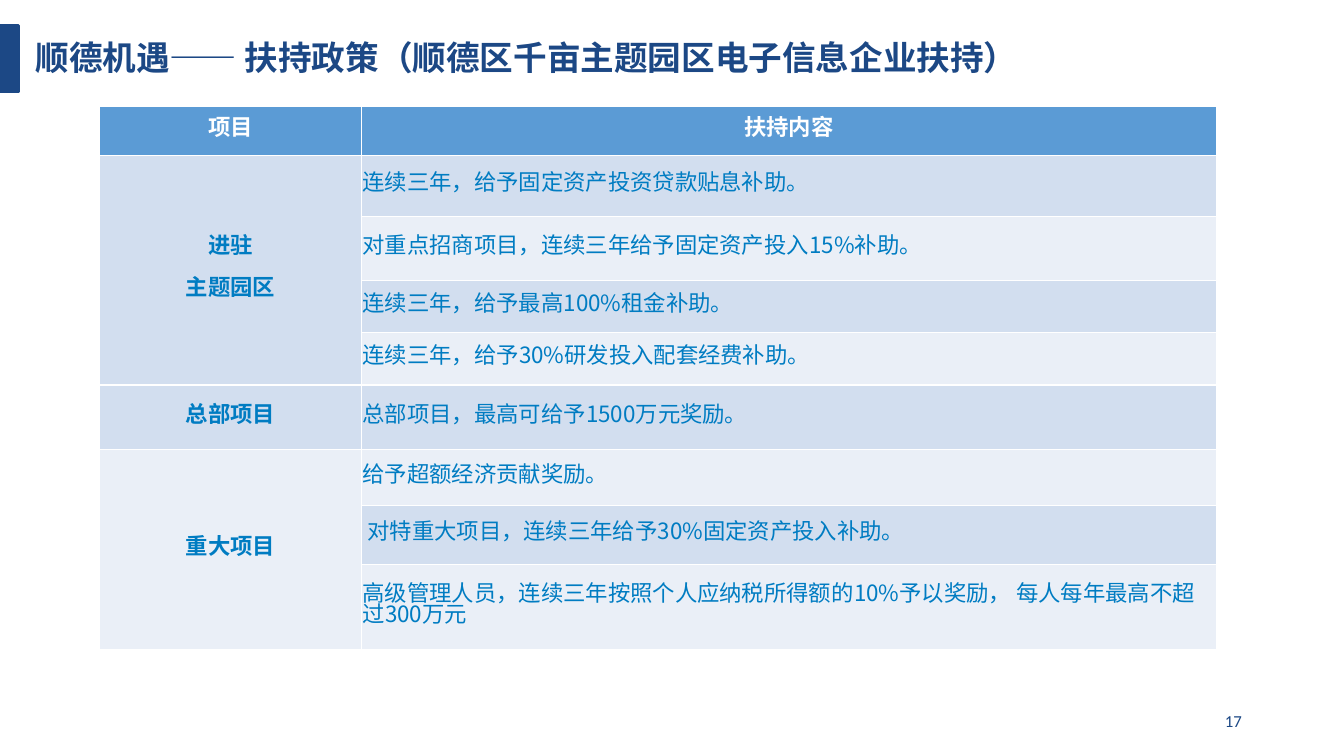
from dataclasses import dataclass

from lxml.etree import SubElement
from pptx import Presentation
from pptx.dml.color import RGBColor
from pptx.enum.shapes import MSO_SHAPE
from pptx.enum.text import MSO_ANCHOR, MSO_AUTO_SIZE, PP_ALIGN
from pptx.oxml.ns import qn
from pptx.slide import Slide
from pptx.table import _Cell as Cell
from pptx.text.text import _Paragraph as Para
from pptx.util import Cm, Pt


@dataclass(frozen=True)
class Theme:
    navy: str = "1C4885"
    head: str = "5B9BD5"
    text: str = "007CC2"
    white: str = "FFFFFF"
    bands: tuple[str, str] = ("D2DEEF", "EAEFF7")
    font: str = "Noto Sans CJK SC"
    digits: str = "Calibri"
    title: int = 24
    body: int = 16
    page: int = 12
    line: int = 15


@dataclass(frozen=True)
class Item:
    text: str
    height: float
    inset: float = 0.03


@dataclass(frozen=True)
class Group:
    name: str
    items: tuple[Item, ...]


THEME = Theme()
HEADS = ("项目", "扶持内容")
HEAD_HEIGHT = 1.24
WIDTHS = (6.6, 21.54)
GROUPS = (
    Group("进驻\n主题园区", (
        Item("连续三年，给予固定资产投资贷款贴息补助。", 1.55),
        Item("对重点招商项目，连续三年给予固定资产投入15%补助。", 1.6),
        Item("连续三年，给予最高100%租金补助。", 1.32),
        Item("连续三年，给予30%研发投入配套经费补助。", 1.32),
    )),
    Group("总部项目", (
        Item("总部项目，最高可给予1500万元奖励。", 1.63),
    )),
    Group("重大项目", (
        Item("给予超额经济贡献奖励。", 1.4),
        Item("对特重大项目，连续三年给予30%固定资产投入补助。", 1.5, 0.15),
        Item("高级管理人员，连续三年按照个人应纳税所得额的10%予以奖励， "
             "每人每年最高不超过300万元", 2.13),
    )),
)


def style(para: Para, size: int, color: str, bold: bool = False,
          face: str = THEME.font) -> None:
    """Set the paragraph font for Latin and East Asian text alike."""
    font = para.font
    font.size, font.bold, font.name = Pt(size), bold, face
    font.color.rgb = RGBColor.from_string(color)
    SubElement(font._element, qn("a:ea"), typeface=face)


def paint(cell: Cell, color: str) -> None:
    cell.fill.solid()
    cell.fill.fore_color.rgb = RGBColor.from_string(color)


def write(cell: Cell, text: str, color: str, bold: bool,
          align: PP_ALIGN, inset: float = 0.03) -> None:
    cell.vertical_anchor = MSO_ANCHOR.MIDDLE
    cell.margin_left = Cm(inset)
    cell.margin_top = cell.margin_right = Cm(0.03)
    cell.margin_bottom = 0
    cell.text = text
    for i, para in enumerate(cell.text_frame.paragraphs):
        para.alignment = align
        para.line_spacing = Pt(THEME.line)
        if i:
            para.space_before = Pt(THEME.line)
        style(para, THEME.body, color, bold)


def add_title(slide: Slide, text: str) -> None:
    title = slide.shapes.title
    title.left, title.top = Cm(0.64), Cm(0.81)
    title.width, title.height = Cm(31.9), Cm(1.27)
    frame = title.text_frame
    frame.text = text
    frame.auto_size = MSO_AUTO_SIZE.NONE
    frame.vertical_anchor = MSO_ANCHOR.MIDDLE
    para = frame.paragraphs[0]
    para.alignment = PP_ALIGN.LEFT
    style(para, THEME.title, THEME.navy, True)


def add_mark(slide: Slide) -> None:
    mark = slide.shapes.add_shape(
        MSO_SHAPE.RECTANGLE, 0, Cm(0.64), Cm(0.46), Cm(1.68))
    mark.shadow.inherit = False
    mark.fill.solid()
    mark.fill.fore_color.rgb = RGBColor.from_string(THEME.navy)
    mark.line.color.rgb = RGBColor.from_string(THEME.navy)
    mark.line.width = Pt(2)


def add_grid(slide: Slide) -> None:
    heights = [HEAD_HEIGHT] + [i.height for g in GROUPS for i in g.items]
    grid = slide.shapes.add_table(
        len(heights), len(WIDTHS), Cm(2.51), Cm(2.67),
        Cm(sum(WIDTHS)), Cm(sum(heights))).table
    for col, width in zip(grid.columns, WIDTHS):
        col.width = Cm(width)
    for row, height in zip(grid.rows, heights):
        row.height = Cm(height)
    for col, text in enumerate(HEADS):
        cell = grid.cell(0, col)
        paint(cell, THEME.head)
        write(cell, text, THEME.white, True, PP_ALIGN.CENTER)

    top = 1
    for group in GROUPS:
        for row, item in enumerate(group.items, top):
            band = THEME.bands[(row - 1) % 2]
            for cell in grid.rows[row].cells:
                paint(cell, band)
            write(grid.cell(row, 1), item.text, THEME.text, False,
                  PP_ALIGN.LEFT, item.inset)
        name = grid.cell(top, 0)
        write(name, group.name, THEME.text, True, PP_ALIGN.CENTER)
        last = top + len(group.items) - 1
        if last > top:
            name.merge(grid.cell(last, 0))
        top = last + 1


def add_page(slide: Slide, text: str) -> None:
    box = slide.shapes.add_textbox(Cm(23.93), Cm(17.65), Cm(7.62), Cm(1.02))
    frame = box.text_frame
    frame.word_wrap = True
    frame.vertical_anchor = MSO_ANCHOR.MIDDLE
    frame.text = text
    para = frame.paragraphs[0]
    para.alignment = PP_ALIGN.RIGHT
    style(para, THEME.page, THEME.navy, face=THEME.digits)


def main() -> None:
    deck = Presentation()
    deck.slide_width, deck.slide_height = Cm(33.87), Cm(19.05)
    slide = deck.slides.add_slide(deck.slide_layouts[5])
    add_page(slide, "17")
    add_title(slide, "顺德机遇—— 扶持政策（顺德区千亩主题园区电子信息企业扶持）")
    add_mark(slide)
    add_grid(slide)
    deck.save("out.pptx")


if __name__ == "__main__":
    main()
